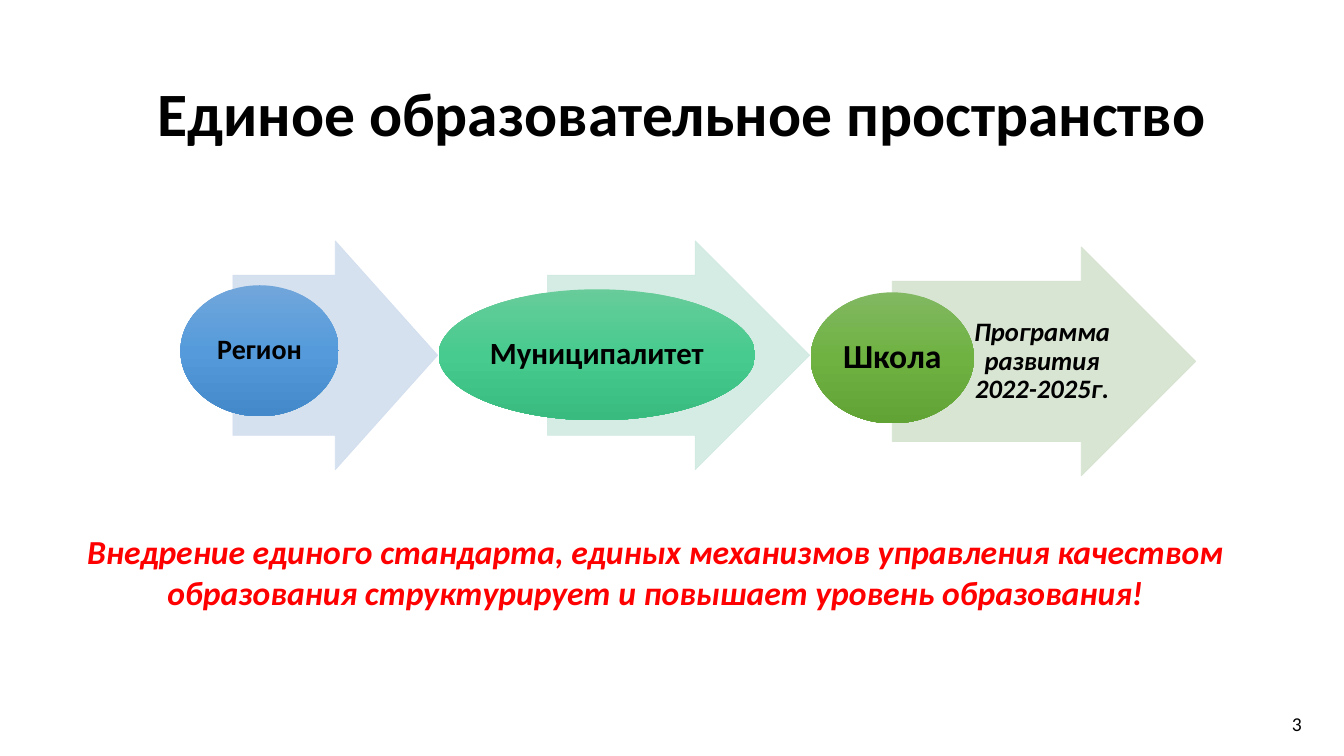
from copy import deepcopy

from pptx import Presentation
from pptx import util as u
from pptx.dml.color import RGBColor
from pptx.enum import shapes, text
from pptx.oxml.ns import qn
from lxml import etree

WIDE, HIGH = u.Inches(13.33), u.Inches(7.5)
BLACK = RGBColor(0, 0, 0)
RED = RGBColor(0xFF, 0, 0)
PALE_BLUE = RGBColor(0xD2, 0xDE, 0xEF)
PALE_MINT = RGBColor(0xD0, 0xEA, 0xE1)
PALE_GREEN = RGBColor(0xD5, 0xE3, 0xCF)
BLUES = (RGBColor(0x71, 0xA6, 0xDB), RGBColor(0x55, 0x9B, 0xDB),
         RGBColor(0x44, 0x8A, 0xCA))
MINTS = (RGBColor(0x67, 0xCC, 0x9A), RGBColor(0x47, 0xCB, 0x8E),
         RGBColor(0x39, 0xBB, 0x7F))
GREENS = (RGBColor(0x81, 0xB8, 0x61), RGBColor(0x6F, 0xB2, 0x42),
          RGBColor(0x62, 0xA3, 0x36))

ARROW_HIGH, OVAL_HIGH = 30.27, 17.33
MID = text.MSO_ANCHOR.MIDDLE
TOP = text.MSO_ANCHOR.TOP
CENTER = text.PP_ALIGN.CENTER
RIGHT = text.PP_ALIGN.RIGHT

LEVELS = [
    ("Регион", 20, (17.33, 31.87, 15.23), (13.43, 37.73, 11.78),
     PALE_BLUE, BLUES),
    ("Муниципалитет", 22, (40.74, 31.87, 19.5), (32.63, 38.27, 23.56),
     PALE_MINT, MINTS),
    ("Школа", 24, (66.39, 32.67, 22.58), (60.32, 38.67, 12.15),
     PALE_GREEN, GREENS),
]


def share(x, y, w, h):
    return [int(size * part / 100) for size, part in
            ((WIDE, x), (HIGH, y), (WIDE, w), (HIGH, h))]


def format(item, values):
    for name, value in values.items():
        setattr(item, name, value)


def write(shape, words, size, align=CENTER, anchor=MID, pad=None,
          space=1.0, **style):
    frame = shape.text_frame
    format(frame, {"word_wrap": True, "vertical_anchor": anchor})
    if pad is not None:
        sides = ("left", "top", "right", "bottom")
        format(frame, {f"margin_{side}": u.Inches(pad) for side in sides})
    para = frame.paragraphs[0]
    format(para, {"alignment": align, "line_spacing": space})
    run = para.add_run()
    run.text = words
    format(run.font, {"name": "Calibri", "size": u.Pt(size), **style})
    run.font.color.rgb = style.get("color_rgb", BLACK)


def label(slide, place, words, size, color=BLACK, **style):
    box = slide.shapes.add_textbox(*share(*place))
    write(box, words, size, **style)
    box.text_frame.paragraphs[0].runs[0].font.color.rgb = color


def fade(fill):
    for tone in fill.iter(qn("a:srgbClr")):
        etree.SubElement(tone, qn("a:alpha"), val="90000")


def arrow(slide, place, color):
    shape = slide.shapes.add_shape(
        shapes.MSO_SHAPE.RIGHT_ARROW, *share(*place, ARROW_HIGH))
    shape.shadow.inherit = False
    shape.adjustments[0], shape.adjustments[1] = 0.7, 0.5
    shape.fill.solid()
    shape.fill.fore_color.rgb = color
    shape.line.color.rgb = color
    shape.line.width = u.Pt(0.5)
    fade(shape._element.spPr)


def oval(slide, place, words, size, tones):
    shape = slide.shapes.add_shape(
        shapes.MSO_SHAPE.OVAL, *share(*place, OVAL_HIGH))
    shape.shadow.inherit = False
    shape.line.fill.background()
    shape.fill.gradient()
    shape.fill.gradient_angle = 270
    stops = shape._element.spPr.find(".//" + qn("a:gsLst"))
    stops.insert(1, deepcopy(stops[0]))
    for order, (stop, tone) in enumerate(
            zip(shape.fill.gradient_stops, tones)):
        stop.position = order / 2
        stop.color.rgb = tone
    write(shape, words, size, pad=0.02, space=0.9, bold=True)


def head(slide, place, words):
    title = slide.shapes.title
    format(title, dict(zip(("left", "top", "width", "height"),
                           share(*place))))
    write(title, words, 44, space=0.9, bold=True)


def main():
    deck = Presentation()
    format(deck, {"slide_width": WIDE, "slide_height": HIGH})
    slide = deck.slides.add_slide(deck.slide_layouts[5])
    head(slide, (7.65, 5.73, 86.27, 19.33),
         "Единое образовательное пространство")
    for words, size, shaft, disc, pale, tones in LEVELS:
        arrow(slide, shaft, pale)
        oval(slide, disc, words, size, tones)
    label(slide, (72.02, 37.2, 11.03, 21.2),
          "Программа развития 2022-2025г.", 19,
          pad=0.03, space=0.9, bold=True, italic=True)
    label(slide, (5.25, 69.6, 87.02, 12.13),
          "Внедрение единого стандарта, единых механизмов управления "
          "качеством образования структурирует и повышает уровень "
          "образования!", 24, RED, anchor=TOP, bold=True, italic=True)
    label(slide, (75.09, 93.07, 22.51, 5.33), "3", 14, align=RIGHT)
    deck.save("out.pptx")


if __name__ == "__main__":
    main()
